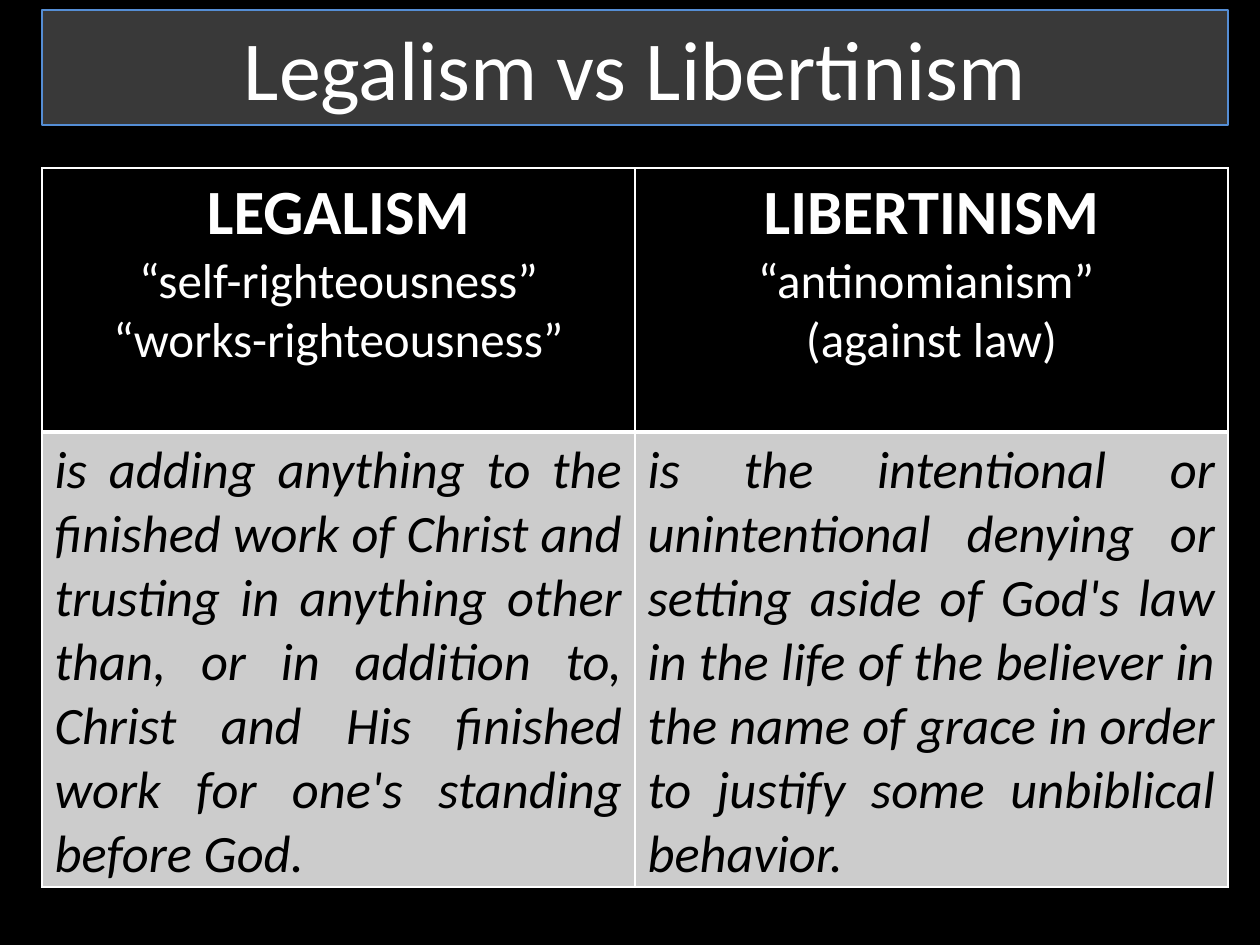
import pptx
import pptx.util
import pptx.dml.color
import pptx.enum.shapes
import pptx.enum.text
import pptx.oxml
import pptx.oxml.ns

PX = 914400 // 126
FONT = "Calibri"
COLORS = {"black": "000000", "white": "FFFFFF", "title": "595959",
          "outline": "558ED5", "body": "CCCCCC"}
ALIGN = pptx.enum.text.PP_ALIGN
HEADS = [
    ["LEGALISM", "“self-righteousness”", "“works-righteousness”"],
    ["LIBERTINISM", "“antinomianism” ", "(against law)"],
]
BODIES = [
    "is adding anything to the finished work of Christ and trusting in anything other "
    "than, or in addition to, Christ and His finished work for one's standing before God.",
    "is the intentional or unintentional denying or setting aside of God's law in the life "
    "of the believer in the name of grace in order to justify some unbiblical behavior.",
]


def px(n):
    return pptx.util.Emu(n * PX)


def rgb(name):
    return pptx.dml.color.RGBColor.from_string(COLORS[name])


def sub(parent, tag, **attrs):
    el = pptx.oxml.parse_xml(f"<{tag} {pptx.oxml.ns.nsdecls('a')}/>")
    for key, value in attrs.items():
        el.set(key, str(value))
    parent.append(el)
    return el


def add_run(p, text, size, color, align, bold=False, italic=False):
    p.alignment = align
    r = p.add_run()
    r.text = text
    r.font.name = FONT
    r.font.size = pptx.util.Pt(size)
    r.font.bold = bold
    r.font.italic = italic
    r.font.color.rgb = rgb(color)


def set_borders(cell, widths):
    tcPr = cell._tc.get_or_add_tcPr()
    for side, width in zip("LRTB", widths):
        ln = sub(tcPr, f"a:ln{side}", w=pptx.util.Pt(width))
        sub(sub(ln, "a:solidFill"), "a:srgbClr", val=COLORS["white"])


def style_cell(cell, fill, widths):
    set_borders(cell, widths)
    cell.fill.solid()
    cell.fill.fore_color.rgb = rgb(fill)


def add_title(s, x, y, w, h):
    sp = s.shapes.add_shape(pptx.enum.shapes.MSO_SHAPE.RECTANGLE, px(x), px(y), px(w), px(h))
    sp.shadow.inherit = False
    sp.fill.solid()
    sp.fill.fore_color.rgb = rgb("title")
    color = sp._element.spPr.find(".//" + pptx.oxml.ns.qn("a:srgbClr"))
    sub(color, "a:alpha", val=65000)
    sp.line.color.rgb = rgb("outline")
    sp.line.width = pptx.util.Pt(0.75)
    tf = sp.text_frame
    tf.word_wrap = True
    tf.vertical_anchor = pptx.enum.text.MSO_ANCHOR.TOP
    add_run(tf.paragraphs[0], "Legalism vs Libertinism", 48, "white", ALIGN.CENTER)


def add_comparison(s, x, y, w, head_h, body_h):
    table = s.shapes.add_table(2, 2, px(x), px(y), px(w), px(head_h + body_h)).table
    for row, height in zip(table.rows, (head_h, body_h)):
        row.height = px(height)
    for col, (lines, body) in enumerate(zip(HEADS, BODIES)):
        table.columns[col].width = px(w // 2)
        head = table.cell(0, col)
        style_cell(head, "black", (1, 1, 1, 3))
        tf = head.text_frame
        for i, line in enumerate(lines):
            p = tf.add_paragraph() if i else tf.paragraphs[0]
            add_run(p, line, 28 if i else 36, "white", ALIGN.CENTER, bold=i == 0)
        cell = table.cell(1, col)
        style_cell(cell, "body", (1, 1, 3, 1))
        cell.margin_bottom = 0
        add_run(cell.text_frame.paragraphs[0], body, 30, "black", ALIGN.JUSTIFY, italic=True)


def main():
    prs = pptx.Presentation()
    prs.slide_width, prs.slide_height = pptx.util.Inches(10), pptx.util.Inches(7.5)
    s = prs.slides.add_slide(prs.slide_layouts[6])
    s.background.fill.solid()
    s.background.fill.fore_color.rgb = rgb("black")
    add_title(s, 42, 10, 1186, 115)
    add_comparison(s, 42, 168, 1186, 264, 454)
    prs.save("out.pptx")


if __name__ == "__main__":
    main()
